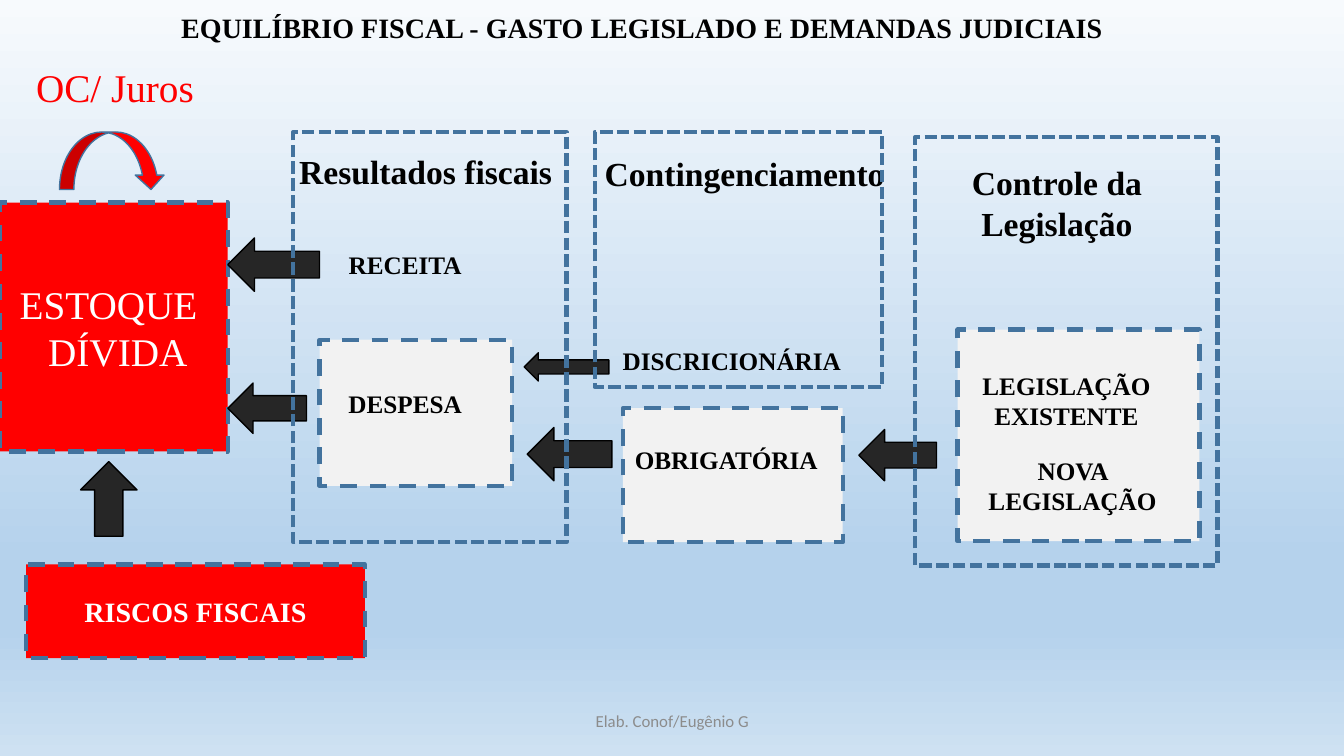
from dataclasses import dataclass, field

from lxml import etree
from pptx import Presentation
from pptx import util as u
from pptx.dml.color import RGBColor
from pptx.enum import dml, shapes, text
from pptx.oxml.ns import qn

COLS, ROWS = 133.33, 75
CELL = u.Inches(0.1)
SERIF, SANS = "Times New Roman", "Calibri"
COLORS = {
    "red": "FF0000",
    "panel": "F2F2F2",
    "outline": "43739E",
    "arrow": "262626",
    "black": "000000",
    "white": "FFFFFF",
    "footer": "8C8C8C",
}
BACKGROUND = [(0, "F7FAFD"), (74, "B5D2EC"), (83, "B5D2EC"), (100, "CEE1F2")]
RECT = shapes.MSO_SHAPE.RECTANGLE
ARROW = shapes.MSO_SHAPE.RIGHT_ARROW
CURVE = shapes.MSO_SHAPE.CURVED_DOWN_ARROW
DASH = dml.MSO_LINE.DASH
SHORT_DASH = dml.MSO_LINE.SQUARE_DOT
LEFT, CENTER = text.PP_ALIGN.LEFT, text.PP_ALIGN.CENTER
TOP = text.MSO_ANCHOR.TOP
MIDDLE = text.MSO_ANCHOR.MIDDLE
BOTTOM = text.MSO_ANCHOR.BOTTOM


@dataclass
class Area:
    col: float
    row: float
    cols: float
    rows: float

    def emu(self) -> list[int]:
        return [round(n * CELL) for n in (self.col, self.row, self.cols, self.rows)]


@dataclass
class Figure:
    area: Area
    fill: str | None = None
    kind: int = RECT
    line: str = "outline"
    width: float = 3
    dash: int | None = DASH
    turn: int = 0
    words: str = ""
    style: dict = field(default_factory=dict)


@dataclass
class Label:
    area: Area
    words: str
    style: dict = field(default_factory=dict)


def arrow(area: Area, turn: int = 180) -> Figure:
    return Figure(area, "arrow", ARROW, "black", 1, None, turn)


def frame(area: Area) -> Figure:
    return Figure(area, dash=SHORT_DASH)


PANELS = [
    Figure(Area(95, 32.7, 24, 21), "panel"),
    Figure(Area(61.8, 40.5, 21.8, 13.3), "panel"),
    Figure(Area(31.7, 33.7, 19.1, 14.5), "panel"),
    Figure(Area(0, 20.1, 22.6, 24.7), "red", words=" ESTOQUE DÍVIDA",
           style=dict(size=28, color="white", bold=False, align=LEFT,
                      anchor=MIDDLE, hang=3.8)),
    Figure(Area(2.6, 56, 33.6, 9.3), "red", words="RISCOS FISCAIS",
           style=dict(size=20, color="white", anchor=MIDDLE, hang=3.8)),
]
ARROWS = [
    arrow(Area(22.6, 23.6, 9.1, 5.3)),
    arrow(Area(22.6, 38, 7.8, 5)),
    arrow(Area(52, 35, 8.4, 2.8)),
    arrow(Area(85.2, 42.6, 7.7, 5.1)),
    arrow(Area(52.3, 42.4, 8.4, 5.3)),
    arrow(Area(7.1, 46.7, 7.4, 5.6), 270),
    Figure(Area(5.9, 13.1, 10.5, 5.7), "red", CURVE, width=1, dash=None),
]
HEADING = dict(size=24)
LABELS = [
    Label(Area(17, 0.6, 108.6, 4.4),
          "EQUILÍBRIO FISCAL - GASTO LEGISLADO E DEMANDAS JUDICIAIS",
          dict(size=20, align=LEFT)),
    Label(Area(2.6, 5.8, 20.1, 5.7), "OC/ Juros",
          dict(size=28, color="red", bold=False, align=LEFT)),
    Label(Area(28.7, 14.5, 30.1, 5), "Resultados fiscais", HEADING | dict(align=LEFT)),
    Label(Area(59, 14.7, 30.1, 5), "Contingenciamento", HEADING | dict(align=LEFT)),
    Label(Area(92.8, 15.6, 24.1, 9.1), "Controle da Legislação", HEADING),
    Label(Area(31.5, 24.2, 17.4, 4), "RECEITA"),
    Label(Area(31.5, 34.9, 17.4, 7.1), "DESPESA", dict(anchor=BOTTOM)),
    Label(Area(60.4, 33.8, 24.4, 4), "DISCRICIONÁRIA"),
    Label(Area(61.8, 43.6, 20.5, 4), "OBRIGATÓRIA"),
    Label(Area(93.6, 36.2, 24.4, 7.1), "LEGISLAÇÃO EXISTENTE"),
    Label(Area(94.2, 44.7, 24.4, 7.1), "NOVA LEGISLAÇÃO"),
    Label(Area(44.2, 69.5, 45, 4), "Elab. Conof/Eugênio G",
          dict(size=12, color="footer", bold=False, font=SANS, anchor=MIDDLE)),
]
FRAMES = [
    frame(Area(29.1, 13.1, 27.1, 40.7)),
    frame(Area(59, 13.1, 28.5, 25.3)),
    frame(Area(90.8, 13.6, 30, 42.5)),
]


def rgb(name: str) -> RGBColor:
    return RGBColor.from_string(COLORS[name])


def write(tf, words: str, *, size: float = 18, color: str = "black", bold: bool = True,
          font: str = SERIF, align=CENTER, anchor=TOP, hang: float = 0) -> None:
    tf.word_wrap = True
    tf.vertical_anchor = anchor
    p = tf.paragraphs[0]
    p.alignment = align
    if hang:
        indent = round(hang * CELL)
        pr = p._p.get_or_add_pPr()
        pr.set("marL", str(indent))
        pr.set("indent", str(-indent))
    r = p.add_run()
    r.text = words
    r.font.name = font
    r.font.size = u.Pt(size)
    r.font.bold = bold
    r.font.color.rgb = rgb(color)


def draw_figure(s, fig: Figure) -> None:
    sp = s.shapes.add_shape(fig.kind, *fig.area.emu())
    sp.shadow.inherit = False
    sp.rotation = fig.turn
    if fig.fill:
        sp.fill.solid()
        sp.fill.fore_color.rgb = rgb(fig.fill)
    else:
        sp.fill.background()
    sp.line.color.rgb = rgb(fig.line)
    sp.line.width = u.Pt(fig.width)
    if fig.dash is not None:
        sp.line.dash_style = fig.dash
    if fig.words:
        write(sp.text_frame, fig.words, **fig.style)


def draw_label(s, label: Label) -> None:
    sp = s.shapes.add_textbox(*label.area.emu())
    write(sp.text_frame, label.words, **label.style)


def paint_background(s) -> None:
    fill = s.background.fill
    fill.gradient()
    fill.gradient_angle = 270
    stops = next(s.element.iter(qn("a:gsLst")))
    for gs in list(stops):
        stops.remove(gs)
    for share, color in BACKGROUND:
        gs = etree.SubElement(stops, qn("a:gs"), pos=str(share * 1000))
        etree.SubElement(gs, qn("a:srgbClr"), val=color)


def main() -> None:
    prs = Presentation()
    prs.slide_width = round(COLS * CELL)
    prs.slide_height = ROWS * CELL
    s = prs.slides.add_slide(prs.slide_layouts[6])
    paint_background(s)
    for fig in PANELS + ARROWS:
        draw_figure(s, fig)
    for label in LABELS:
        draw_label(s, label)
    for fig in FRAMES:
        draw_figure(s, fig)
    prs.save("out.pptx")


if __name__ == "__main__":
    main()
